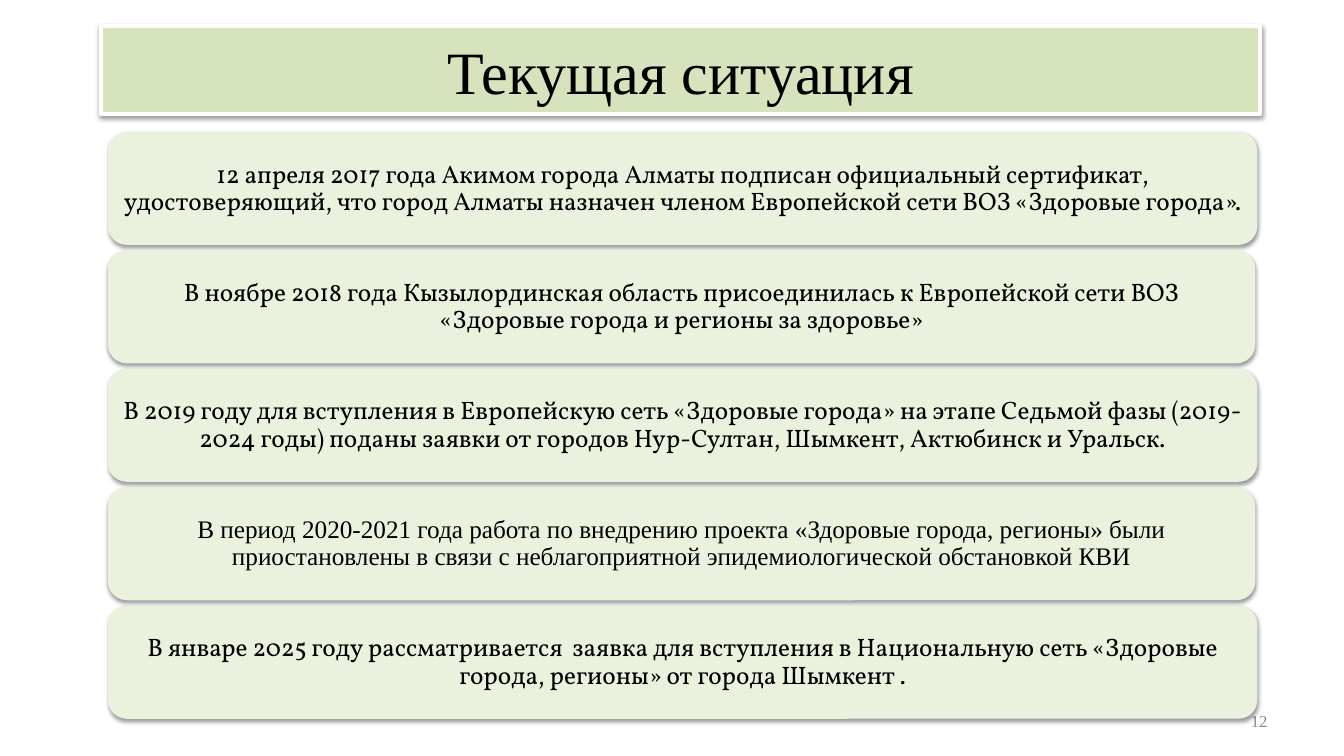
from dataclasses import dataclass

from lxml.etree import SubElement
from pptx import Presentation
from pptx.dml.color import RGBColor
from pptx.enum.shapes import MSO_SHAPE
from pptx.enum.text import MSO_ANCHOR, PP_ALIGN
from pptx.oxml.ns import qn
from pptx.shapes.autoshape import Shape
from pptx.slide import Slide
from pptx.util import Inches, Pt

WIDTH, HEIGHT = Inches(13.33), Inches(7.5)


@dataclass(frozen=True)
class Theme:
    black: str = "000000"
    white: str = "FFFFFF"
    gray: str = "888888"
    green: str = "D6E3BC"
    pale: str = "EAF1DD"
    serif: str = "Times New Roman"
    book: str = "Vollkorn"
    title: float = 42.9
    body: float = 18
    small: float = 12


THEME = Theme()


@dataclass(frozen=True)
class Box:
    """Left, top, width and height as percentages of the slide."""
    left: float
    top: float
    width: float
    height: float

    def place(self) -> tuple[int, int, int, int]:
        return (
            int(WIDTH * self.left / 100),
            int(HEIGHT * self.top / 100),
            int(WIDTH * self.width / 100),
            int(HEIGHT * self.height / 100),
        )


@dataclass(frozen=True)
class Card:
    text: str
    width: float
    font: str = THEME.book


WIDE, SLIM = 85.52, 85.37
FIRST = Box(8.03, 17.47, WIDE, 14.93)
STEP = 15.67
BANNER = Box(7.5, 3.47, 86.27, 11.6)
NUMBER = Box(71.72, 92.67, 23.33, 5.33)

CARDS = [
    Card("12 апреля 2017 года Акимом города Алматы подписан официальный сертификат, "
         "удостоверяющий, что город Алматы назначен членом Европейской сети ВОЗ "
         "«Здоровые города».", WIDE),
    Card("В ноябре 2018 года Кызылординская область присоединилась к Европейской сети "
         "ВОЗ «Здоровые города и регионы за здоровье»", SLIM),
    Card("В 2019 году для вступления в Европейскую сеть «Здоровые города» на этапе "
         "Седьмой фазы (2019-2024 годы) поданы заявки от городов Нур-Султан, Шымкент, "
         "Актюбинск и Уральск.", WIDE),
    Card("В период 2020-2021 года работа по внедрению проекта «Здоровые города, "
         "регионы» были приостановлены в связи с неблагоприятной эпидемиологической "
         "обстановкой КВИ", SLIM, THEME.serif),
    Card("В январе 2025 году рассматривается  заявка для вступления в Национальную "
         "сеть «Здоровые города, регионы» от города Шымкент .", WIDE),
]


def write(shape: Shape, text: str, *, size: float, font: str = THEME.serif,
          color: str = THEME.black, align: PP_ALIGN = PP_ALIGN.CENTER,
          side: float = 0.1, edge: float = 0.05, space: float = 1.0) -> None:
    frame = shape.text_frame
    frame.word_wrap = True
    frame.vertical_anchor = MSO_ANCHOR.MIDDLE
    frame.margin_left = frame.margin_right = Inches(side)
    frame.margin_top = frame.margin_bottom = Inches(edge)
    line = frame.paragraphs[0]
    line.alignment = align
    line.line_spacing = space
    run = line.add_run()
    run.text = text
    run.font.size = Pt(size)
    run.font.name = font
    run.font.color.rgb = RGBColor.from_string(color)


def shade(shape: Shape) -> None:
    shape.shadow.inherit = False
    effects = shape.element.spPr.find(qn("a:effectLst"))
    outer = SubElement(effects, qn("a:outerShdw"), blurRad=str(Pt(3.1)),
                       dist=str(Pt(1.6)), dir="5400000", rotWithShape="0")
    color = SubElement(outer, qn("a:srgbClr"), val=THEME.black)
    SubElement(color, qn("a:alpha"), val="38000")


def panel(slide: Slide, kind: MSO_SHAPE, box: Box, fill: str) -> Shape:
    shape = slide.shapes.add_shape(kind, *box.place())
    shape.fill.solid()
    shape.fill.fore_color.rgb = RGBColor.from_string(fill)
    shape.line.fill.background()
    shade(shape)
    return shape


def main() -> None:
    deck = Presentation()
    deck.slide_width, deck.slide_height = WIDTH, HEIGHT
    slide = deck.slides.add_slide(deck.slide_layouts[6])

    number = slide.shapes.add_textbox(*NUMBER.place())
    write(number, "12", size=THEME.small, color=THEME.gray, align=PP_ALIGN.RIGHT)

    for row, card in enumerate(CARDS):
        box = Box(FIRST.left, FIRST.top + row * STEP, card.width, FIRST.height)
        shape = panel(slide, MSO_SHAPE.ROUNDED_RECTANGLE, box, THEME.pale)
        write(shape, card.text, size=THEME.body, font=card.font,
              side=0.07, edge=0.04, space=0.9)

    banner = panel(slide, MSO_SHAPE.RECTANGLE, BANNER, THEME.green)
    banner.line.color.rgb = RGBColor.from_string(THEME.white)
    banner.line.width = Pt(3)
    write(banner, "Текущая ситуация", size=THEME.title)

    deck.save("out.pptx")


if __name__ == "__main__":
    main()
